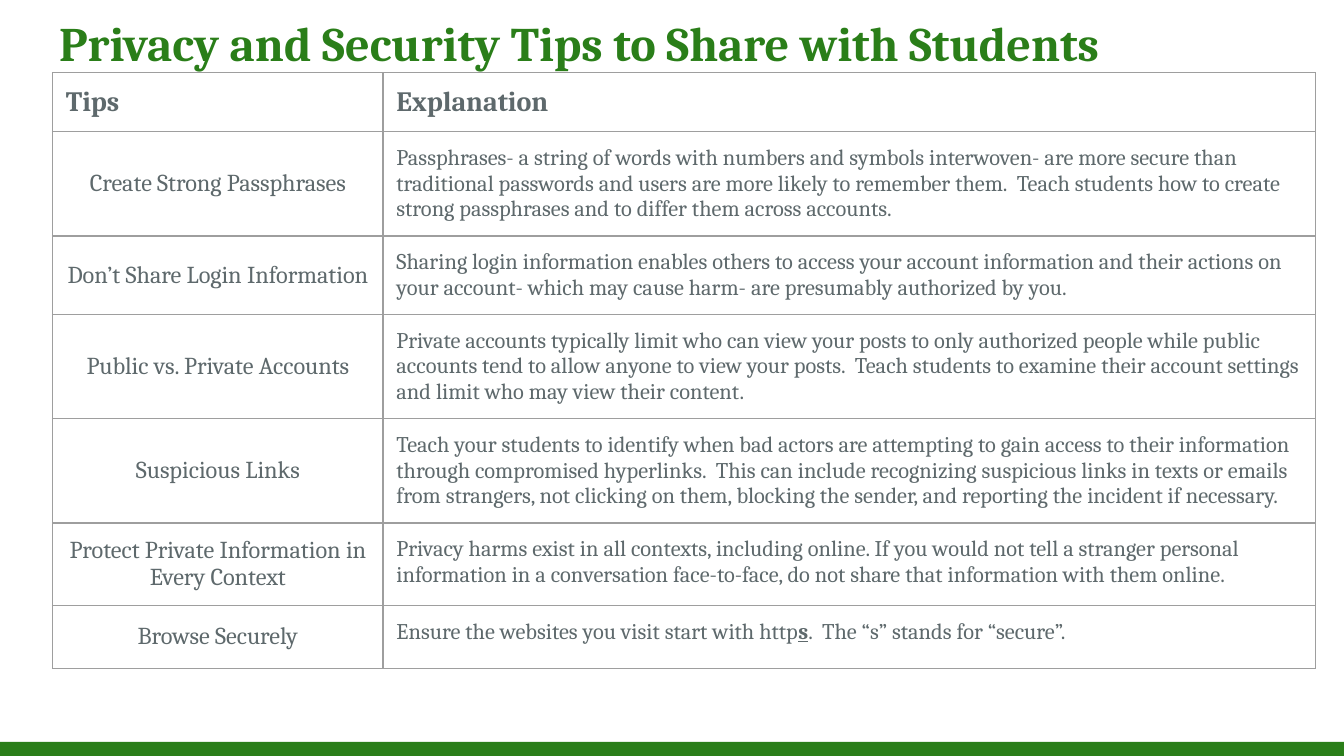
from lxml import etree
from pptx import Presentation
from pptx import util as u
from pptx.dml.color import RGBColor
from pptx.enum import shapes, text
from pptx.oxml.ns import qn

FONT = "Cambria"
GREEN, GREY, BORDER = "2A7E19", "5E696C", "9E9E9E"
MARGIN = u.Inches(0.1)
SLIDE_WIDTH = u.Inches(10)
SLIDE_HEIGHT = u.Inches(10 * 9 / 16)  # widescreen

TITLE = "Privacy and Security Tips to Share with Students"
HEADERS = ("Tips", "Explanation")
# Each explanation is a list of (text, emphasized) runs
TIPS = [
    ("Create Strong Passphrases", [(
        "Passphrases- a string of words with numbers and symbols interwoven- are more secure than "
        "traditional passwords and users are more likely to remember them.  Teach students how to "
        "create strong passphrases and to differ them across accounts.", False)]),
    ("Don’t Share Login Information", [(
        "Sharing login information enables others to access your account information and their "
        "actions on your account- which may cause harm- are presumably authorized by you.", False)]),
    ("Public vs. Private Accounts", [(
        "Private accounts typically limit who can view your posts to only authorized people while "
        "public accounts tend to allow anyone to view your posts.  Teach students to examine their "
        "account settings and limit who may view their content.", False)]),
    ("Suspicious Links", [(
        "Teach your students to identify when bad actors are attempting to gain access to their "
        "information through compromised hyperlinks.  This can include recognizing suspicious links "
        "in texts or emails from strangers, not clicking on them, blocking the sender, and reporting "
        "the incident if necessary.", False)]),
    ("Protect Private Information in Every Context", [(
        "Privacy harms exist in all contexts, including online. If you would not tell a stranger "
        "personal information in a conversation face-to-face, do not share that information with "
        "them online.", False)]),
    ("Browse Securely", [
        ("Ensure the websites you visit start with http", False),
        ("s", True),
        (".  The “s” stands for “secure”.", False)]),
]


def color(value):
    return RGBColor.from_string(value)


def add_run(paragraph, words, size, fill, bold=False, underline=False):
    run = paragraph.add_run()
    run.text = words
    font = run.font
    font.name, font.size = FONT, u.Pt(size)
    font.bold, font.underline = bold, underline
    font.color.rgb = color(fill)


def set_margins(target):
    target.margin_left = target.margin_right = MARGIN
    target.margin_top = target.margin_bottom = MARGIN


def add_footer_bar(slide):
    bar = slide.shapes.add_shape(shapes.MSO_SHAPE.RECTANGLE, u.Inches(0), u.Inches(5.52),
                                 SLIDE_WIDTH, u.Inches(0.11))
    bar.shadow.inherit = False
    bar.fill.solid()
    bar.fill.fore_color.rgb = color(GREEN)
    bar.line.fill.background()


def format_title(slide):
    title = slide.shapes.title
    title.left, title.top = u.Inches(0.34), u.Inches(0)
    title.width, title.height = u.Inches(9.32), u.Inches(0.68)
    frame = title.text_frame
    set_margins(frame)
    frame.word_wrap = True
    frame.auto_size = text.MSO_AUTO_SIZE.NONE
    frame.vertical_anchor = text.MSO_ANCHOR.TOP
    paragraph = frame.paragraphs[0]
    paragraph.alignment = text.PP_ALIGN.LEFT
    add_run(paragraph, TITLE, 25.8, GREEN, bold=True)


def format_cell(cell):
    """Borders go in ahead of the fill, as the schema orders them."""
    set_margins(cell)
    properties = cell._tc.get_or_add_tcPr()
    for side in ("a:lnL", "a:lnR", "a:lnT", "a:lnB"):
        line = etree.SubElement(properties, qn(side), w=str(u.Pt(0.75)))
        fill = etree.SubElement(line, qn("a:solidFill"))
        etree.SubElement(fill, qn("a:srgbClr"), val=BORDER)
    cell.fill.background()


def add_tips_table(slide):
    row_heights = [0.43] + [0.47] * len(TIPS)
    frame = slide.shapes.add_table(len(row_heights), len(HEADERS), u.Inches(0.39), u.Inches(0.54),
                                   u.Inches(9.4), u.Inches(sum(row_heights)))
    table = frame.table
    table.first_row = table.horz_banding = False
    for column, width in zip(table.columns, (2.46, 6.94)):
        column.width = u.Inches(width)
    for row, height in zip(table.rows, row_heights):
        row.height = u.Inches(height)
    for cell in table.iter_cells():
        format_cell(cell)

    # Header row
    for index, header in enumerate(HEADERS):
        add_run(table.cell(0, index).text_frame.paragraphs[0], header, 15, GREY, bold=True)

    # Tip rows: centred name, then explanation
    for index, (tip, explanation) in enumerate(TIPS, start=1):
        name_cell = table.cell(index, 0)
        name_cell.vertical_anchor = text.MSO_ANCHOR.MIDDLE
        paragraph = name_cell.text_frame.paragraphs[0]
        paragraph.alignment = text.PP_ALIGN.CENTER
        add_run(paragraph, tip, 13, GREY)
        paragraph = table.cell(index, 1).text_frame.paragraphs[0]
        for words, emphasized in explanation:
            add_run(paragraph, words, 12, GREY, bold=emphasized, underline=emphasized)


def main():
    presentation = Presentation()
    presentation.slide_width, presentation.slide_height = SLIDE_WIDTH, SLIDE_HEIGHT
    slide = presentation.slides.add_slide(presentation.slide_layouts[5])
    add_footer_bar(slide)
    format_title(slide)
    add_tips_table(slide)
    presentation.save("out.pptx")


if __name__ == "__main__":
    main()
